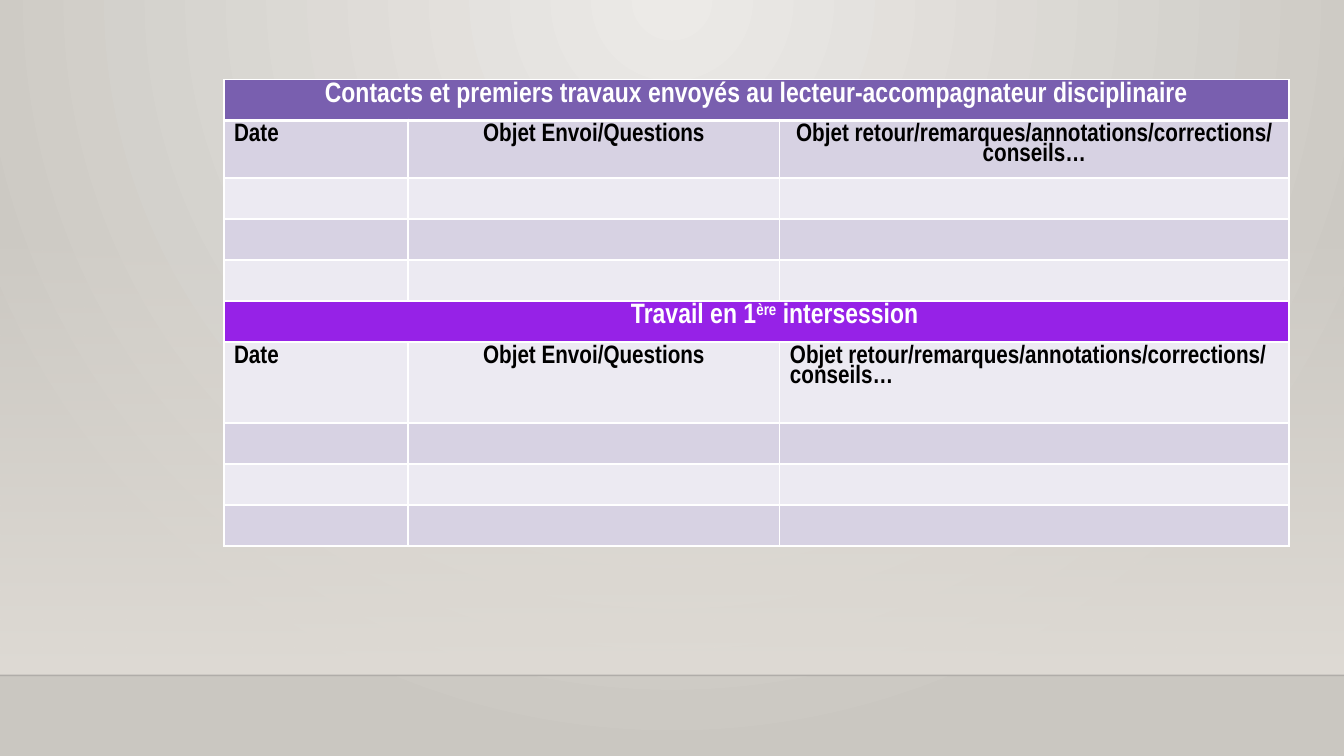
from dataclasses import dataclass

from lxml.etree import SubElement
from pptx import Presentation
from pptx.dml.color import RGBColor
from pptx.enum.shapes import MSO_CONNECTOR, MSO_SHAPE
from pptx.enum.text import PP_ALIGN
from pptx.oxml import parse_xml
from pptx.oxml.ns import nsdecls, qn
from pptx.util import Pt


@dataclass(frozen=True)
class Theme:
    font: str = "Arial Narrow"
    heading_size: float = 20
    label_size: float = 18
    line_spacing: float = 0.85
    white: str = "FFFFFF"
    black: str = "000000"
    heading: str = "795FAF"
    section: str = "9622E7"
    bands: tuple = ("ECEAF2", "D7D2E3")
    glow: str = "ECEAE7"
    edge: str = "CAC7C1"
    wall: str = "DFDBD5"
    floor_line: str = "000001"


THEME = Theme()
SLIDE_W, SLIDE_H = 960, 540
CENTER, LEFT = PP_ALIGN.CENTER, PP_ALIGN.LEFT

COLUMN_WIDTHS = (131.4, 265.7, 363.6)
ROW_HEIGHTS = (29.3, 41.1, 29.3, 29.3, 29.3, 29.3, 57.9, 29.3, 29.3, 29.3)
HEADING_ROW, SECTION_ROW = 0, 5
HEADING = [("Contacts et premiers travaux envoyés au lecteur-accompagnateur disciplinaire", 0)]
SECTION = [("Travail en 1", 0), ("ère", 30000), (" intersession", 0)]
COLUMN_LABELS = (
    ["Date"],
    ["Objet Envoi/Questions"],
    ["Objet retour/remarques/annotations/corrections/", "conseils…"],
)
# Alignment of the labels in each row that carries them
LABEL_ROWS = {1: (LEFT, CENTER, CENTER), 6: (LEFT, CENTER, LEFT)}


def set_gradient(element, start, end, direction, start_alpha=100000):
    """Replace the gradient inside element with a two-stop one."""
    old = element.find(".//" + qn("a:gradFill"))
    new = parse_xml(
        f'<a:gradFill {nsdecls("a")} rotWithShape="1"><a:gsLst>'
        f'<a:gs pos="0"><a:srgbClr val="{start}"><a:alpha val="{start_alpha}"/></a:srgbClr></a:gs>'
        f'<a:gs pos="100000"><a:srgbClr val="{end}"/></a:gs>'
        f"</a:gsLst>{direction}</a:gradFill>"
    )
    old.getparent().replace(old, new)


def add_backdrop(s, x, y, w, h):
    # Radial glow behind everything
    s.background.fill.gradient()
    set_gradient(
        s.element, THEME.glow, THEME.edge,
        '<a:path path="circle"><a:fillToRect l="43000" t="0" r="43000" b="100000"/></a:path>',
    )

    # Wall fading in towards the floor
    sp = s.shapes.add_shape(MSO_SHAPE.RECTANGLE, Pt(x), Pt(y), Pt(w), Pt(h))
    sp.shadow.inherit = False
    sp.line.fill.background()
    sp.fill.gradient()
    set_gradient(sp.element, THEME.wall, THEME.wall, '<a:lin ang="5400000" scaled="0"/>', 0)

    # Floor line
    line = s.shapes.add_connector(MSO_CONNECTOR.STRAIGHT, Pt(x), Pt(y + h), Pt(x + w), Pt(y + h))
    line.line.width = Pt(1)
    line.line.color.rgb = RGBColor.from_string(THEME.floor_line)
    SubElement(line.element.find(".//" + qn("a:srgbClr")), qn("a:alpha"), val="20000")
    SubElement(line.element.spPr, qn("a:effectLst"))


def style_cell(cell, fill, bottom_width=1):
    tc_pr = cell._tc.get_or_add_tcPr()
    for side, width in {"L": 1, "R": 1, "T": 1, "B": bottom_width}.items():
        tc_pr.append(parse_xml(
            f'<a:ln{side} {nsdecls("a")} w="{Pt(width)}"><a:solidFill>'
            f'<a:srgbClr val="{THEME.white}"/></a:solidFill></a:ln{side}>'
        ))
    cell.fill.solid()
    cell.fill.fore_color.rgb = RGBColor.from_string(fill)
    cell.margin_top = cell.margin_bottom = Pt(3.6 if cell.text else 2)


def write_paragraph(p, runs, size, color, align):
    p.alignment = align
    p.line_spacing = THEME.line_spacing
    font_format = {"name": THEME.font, "size": Pt(size), "bold": True}
    for text, baseline in runs:
        r = p.add_run()
        r.text = text
        for name, value in font_format.items():
            setattr(r.font, name, value)
        r.font.color.rgb = RGBColor.from_string(color)
        if baseline:
            r._r.get_or_add_rPr().set("baseline", str(baseline))


def write_labels(table, row, aligns):
    for col, (lines, align) in enumerate(zip(COLUMN_LABELS, aligns)):
        tf = table.cell(row, col).text_frame
        for i, line in enumerate(lines):
            p = tf.add_paragraph() if i else tf.paragraphs[0]
            write_paragraph(p, [(line, 0)], THEME.label_size, THEME.black, align)


def write_band(table, row, runs, indent=0):
    cell = table.cell(row, 0)
    cell.merge(table.cell(row, len(COLUMN_WIDTHS) - 1))
    cell.margin_left = Pt(7.2 + indent)
    write_paragraph(cell.text_frame.paragraphs[0], runs, THEME.heading_size, THEME.white, CENTER)


def add_log_table(s, x, y):
    frame = s.shapes.add_table(
        len(ROW_HEIGHTS), len(COLUMN_WIDTHS),
        Pt(x), Pt(y), Pt(sum(COLUMN_WIDTHS)), Pt(sum(ROW_HEIGHTS)),
    )
    table = frame.table
    for column, width in zip(table.columns, COLUMN_WIDTHS):
        column.width = Pt(width)
    for row, height in zip(table.rows, ROW_HEIGHTS):
        row.height = Pt(height)

    # Wording
    write_band(table, HEADING_ROW, HEADING)
    write_band(table, SECTION_ROW, SECTION, indent=26)
    for row, aligns in LABEL_ROWS.items():
        write_labels(table, row, aligns)

    # Fills and borders
    band_fills = {HEADING_ROW: THEME.heading, SECTION_ROW: THEME.section}
    for i, row in enumerate(table.rows):
        fill = band_fills.get(i, THEME.bands[i % 2])
        for cell in row.cells:
            style_cell(cell, fill, bottom_width=3 if i == HEADING_ROW else 1)


def main():
    prs = Presentation()
    prs.slide_width, prs.slide_height = Pt(SLIDE_W), Pt(SLIDE_H)
    s = prs.slides.add_slide(prs.slide_layouts[6])
    add_backdrop(s, 0, 159, SLIDE_W, 323.4)
    add_log_table(s, 160, 56.8)
    prs.save("out.pptx")


if __name__ == "__main__":
    main()
